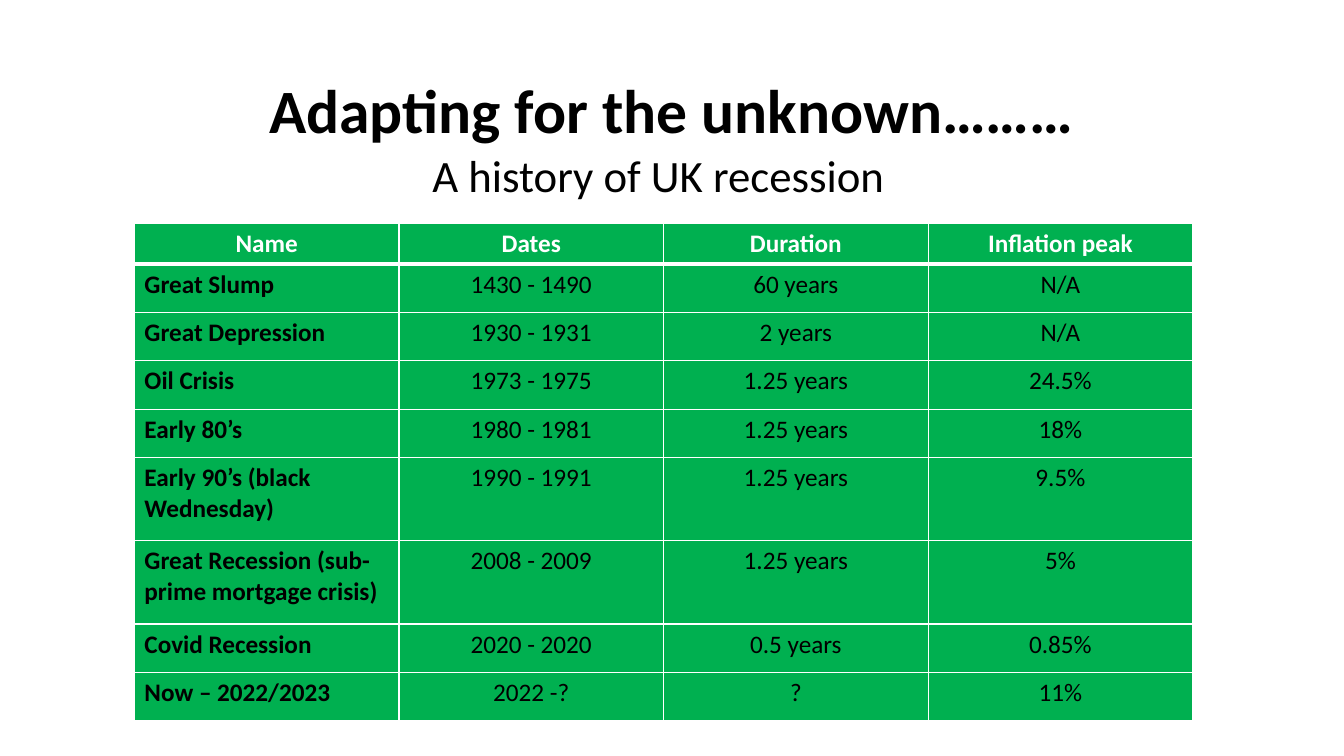
from lxml.etree import SubElement
from pptx import Presentation
from pptx.dml.color import RGBColor
from pptx.enum.text import MSO_ANCHOR, PP_ALIGN
from pptx.oxml.ns import qn
from pptx.util import Pt

FONT = "Calibri"
BLACK, WHITE, GREEN = "000000", "FFFFFF", "00B050"
HEADER = ("Name", "Dates", "Duration", "Inflation peak")
RECESSIONS = [
    ("Great Slump", "1430 - 1490", "60 years", "N/A"),
    ("Great Depression", "1930 - 1931", "2 years", "N/A"),
    ("Oil Crisis", "1973 - 1975", "1.25 years", "24.5%"),
    ("Early 80’s", "1980 - 1981", "1.25 years", "18%"),
    ("Early 90’s (black Wednesday)", "1990 - 1991", "1.25 years", "9.5%"),
    ("Great Recession (sub-prime mortgage crisis)", "2008 - 2009", "1.25 years", "5%"),
    ("Covid Recession", "2020 - 2020", "0.5 years", "0.85%"),
    ("Now – 2022/2023", "2022 -?", "?", "11%"),
]
COLUMN_WIDTH = 189
HEADER_HEIGHT, ONE_LINE, TWO_LINES = 29.2, 34.6, 59.4
ROW_HEIGHTS = [HEADER_HEIGHT] + [ONE_LINE] * 4 + [TWO_LINES] * 2 + [ONE_LINE] * 2


def color(hex_code):
    return RGBColor.from_string(hex_code)


def write(frame, text, size, hex_code=BLACK, bold=False, align=PP_ALIGN.CENTER):
    frame.text = text
    paragraph = frame.paragraphs[0]
    paragraph.alignment = align
    font = paragraph.runs[0].font
    font.name, font.size, font.bold = FONT, Pt(size), bold
    font.color.rgb = color(hex_code)
    return paragraph


def add_heading(slide, box, text, size, bold=False, anchor=MSO_ANCHOR.TOP):
    frame = slide.shapes.add_textbox(*map(Pt, box)).text_frame
    frame.word_wrap = True
    frame.vertical_anchor = anchor
    return write(frame, text, size, bold=bold)


def set_borders(cell, bottom_width):
    """Draw white borders; they must precede the cell's fill in the XML."""
    properties = cell._tc.get_or_add_tcPr()
    for side, width in (("L", 1), ("R", 1), ("T", 1), ("B", bottom_width)):
        line = SubElement(properties, qn(f"a:ln{side}"), w=str(Pt(width)))
        solid = SubElement(line, qn("a:solidFill"))
        SubElement(solid, qn("a:srgbClr"), val=WHITE)


def add_recession_table(slide, left, top):
    rows = [HEADER] + RECESSIONS
    table = slide.shapes.add_table(
        len(rows), len(HEADER), Pt(left), Pt(top),
        Pt(COLUMN_WIDTH * len(HEADER)), Pt(sum(ROW_HEIGHTS))).table
    table.horz_banding = False
    for column in table.columns:
        column.width = Pt(COLUMN_WIDTH)
    for row, height in enumerate(ROW_HEIGHTS):
        table.rows[row].height = Pt(height)
        is_header = row == 0
        for column, text in enumerate(rows[row]):
            cell = table.cell(row, column)
            is_name = column == 0 and not is_header
            write(cell.text_frame, text, 18,
                  hex_code=WHITE if is_header else BLACK,
                  bold=is_header or is_name,
                  align=PP_ALIGN.LEFT if is_name else PP_ALIGN.CENTER)
            # The first data row shares the thick rule under the header
            set_borders(cell, bottom_width=3 if is_header else 1)
            if row == 1:
                cell._tc.tcPr.find(qn("a:lnT")).set("w", str(Pt(3)))
            cell.fill.solid()
            cell.fill.fore_color.rgb = color(GREEN)


def main():
    presentation = Presentation()
    presentation.slide_width, presentation.slide_height = Pt(960), Pt(540)
    slide = presentation.slides.add_slide(presentation.slide_layouts[6])
    title = add_heading(slide, (66, 28.8, 828, 104.4), "Adapting for the unknown………",
                        44, bold=True, anchor=MSO_ANCHOR.MIDDLE)
    title.line_spacing = 0.9
    add_heading(slide, (66, 102.2, 816, 46), "A history of UK recession ", 32)
    add_recession_table(slide, 96, 159.4)
    presentation.save("out.pptx")


if __name__ == "__main__":
    main()
